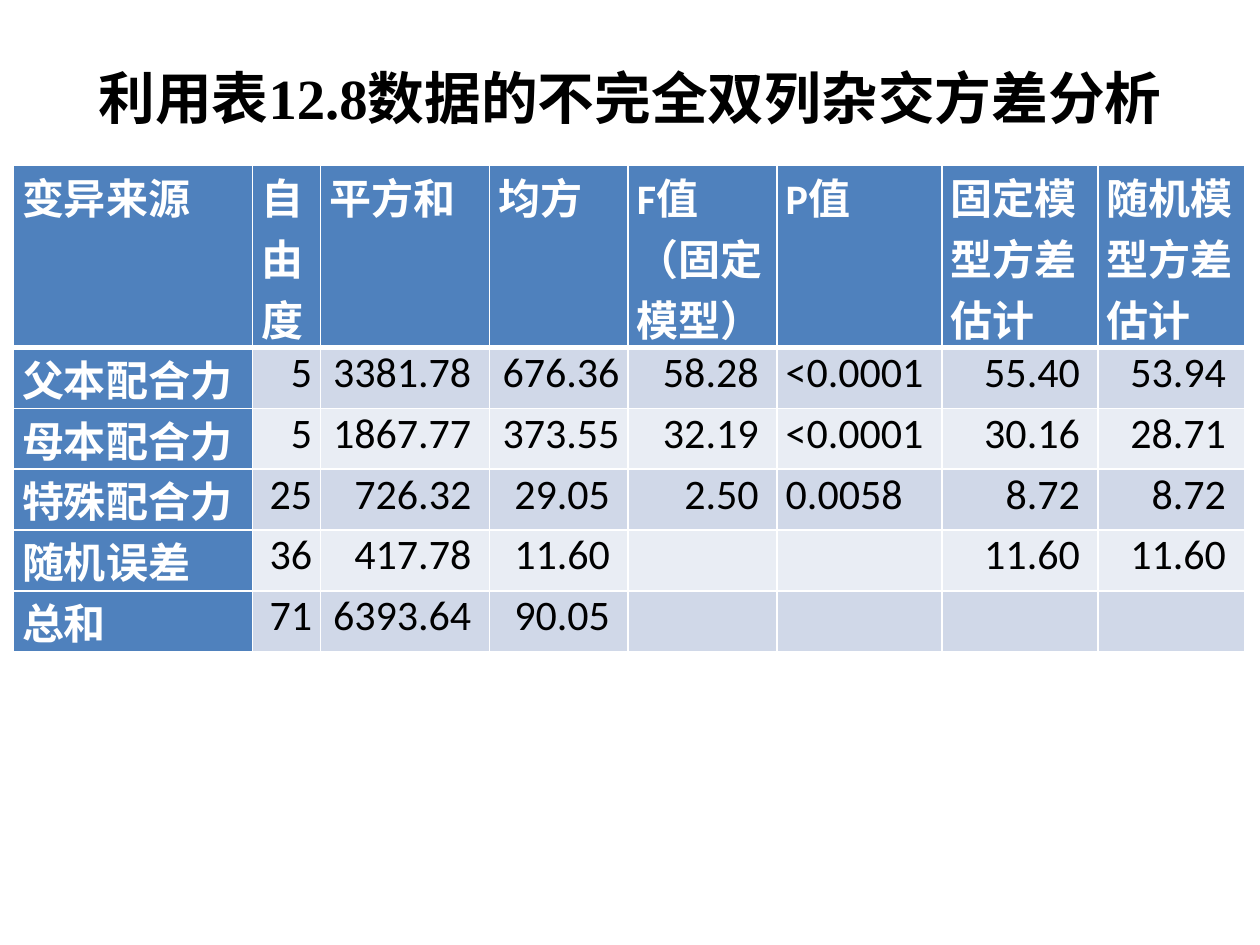
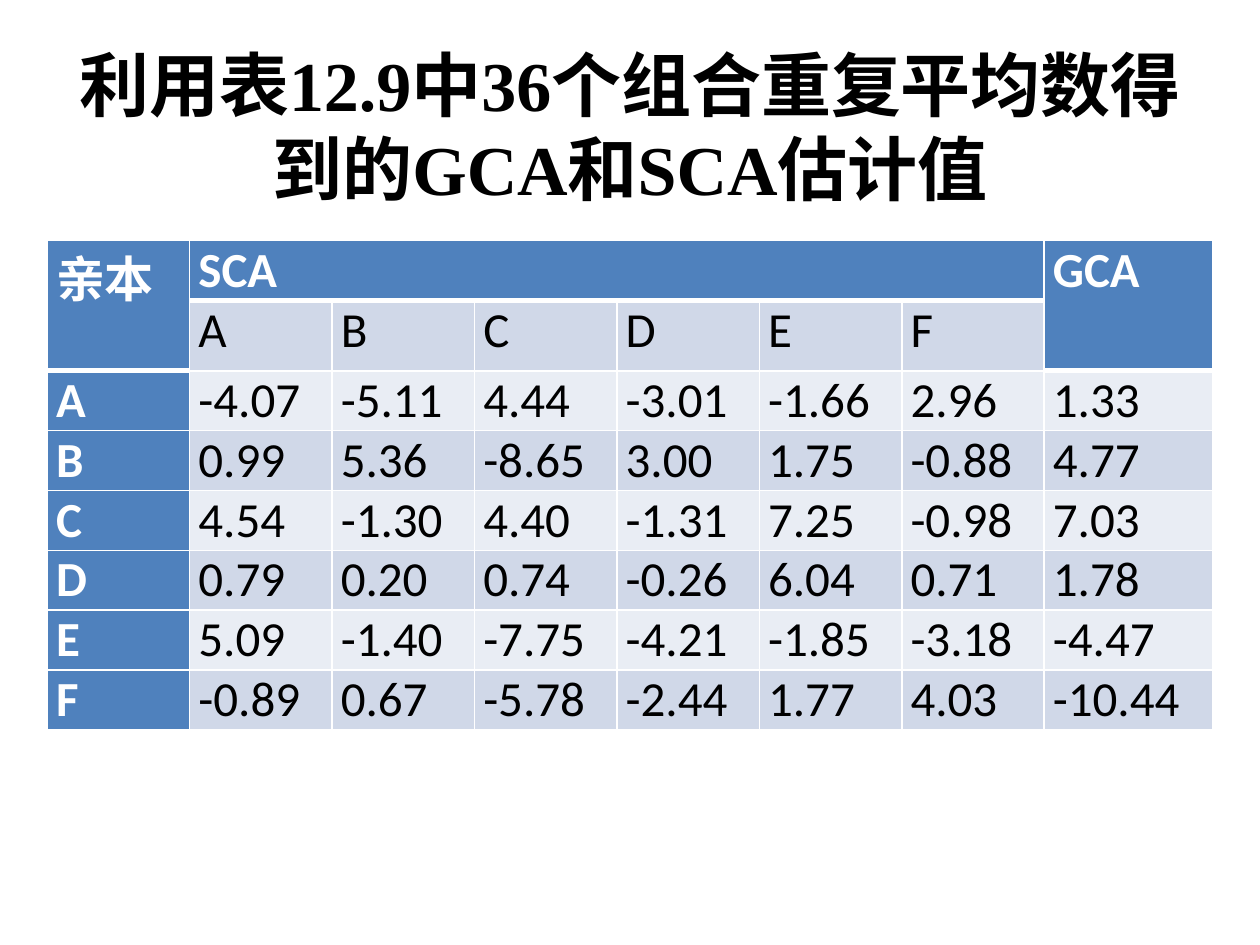
from dataclasses import dataclass

from lxml.etree import SubElement
from pptx import Presentation
from pptx.dml.color import RGBColor as RGB
from pptx.enum.text import MSO_ANCHOR as ANCHOR, PP_ALIGN as ALIGN
from pptx.oxml.ns import qn
from pptx.util import Pt

# Content: variance analysis
ANOVA_TITLE = "利用表12.8数据的不完全双列杂交方差分析"
ANOVA = [
    ["变异来源", "自由度", "平方和", "均方", "F值（固定模型）", "P值",
     "固定模型方差估计", "随机模型方差估计"],
    ["父本配合力", 5, 3381.78, 676.36, 58.28, "<0.0001", 55.40, 53.94],
    ["母本配合力", 5, 1867.77, 373.55, 32.19, "<0.0001", 30.16, 28.71],
    ["特殊配合力", 25, 726.32, 29.05, 2.50, "0.0058", 8.72, 8.72],
    ["随机误差", 36, 417.78, 11.60, "", "", 11.60, 11.60],
    ["总和", 71, 6393.64, 90.05, "", "", "", ""],
]

# Content: combining abilities, SCA by parent pair and GCA last
ABILITY_TITLE = "利用表12.9中36个组合重复平均数得到的GCA和SCA估计值"
PARENTS = "ABCDEF"
ESTIMATES = [
    [-4.07, -5.11, 4.44, -3.01, -1.66, 2.96, 1.33],
    [0.99, 5.36, -8.65, 3.00, 1.75, -0.88, 4.77],
    [4.54, -1.30, 4.40, -1.31, 7.25, -0.98, 7.03],
    [0.79, 0.20, 0.74, -0.26, 6.04, 0.71, 1.78],
    [5.09, -1.40, -7.75, -4.21, -1.85, -3.18, -4.47],
    [-0.89, 0.67, -5.78, -2.44, 1.77, 4.03, -10.44],
]
ABILITY = [
    ["亲本", "SCA", "", "", "", "", "", "GCA"],
    ["", *PARENTS, ""],
    *([parent, *(f"{v:.2f}" for v in row)]
      for parent, row in zip(PARENTS, ESTIMATES)),
]
ABILITY_MERGES = [((0, 0), (1, 0)), ((0, 1), (0, 6)), ((0, 7), (1, 7))]


@dataclass(frozen=True)
class Theme:
    head: str = "4F81BD"
    bands: tuple = ("E9EDF4", "D0D8E8")
    light: str = "FFFFFF"
    dark: str = "000000"
    title_font: str = "Times New Roman"
    body_font: str = "Calibri"
    anova_title: float = 32.4
    anova_body: float = 24
    ability_title: float = 40
    ability_body: float = 28
    thin: float = 1
    heavy: float = 3
    inset: float = 5


T = Theme()


def add_run(p, text, font, size, color, bold):
    r = p.add_run()
    r.text = text
    r.font.name, r.font.size, r.font.bold = font, Pt(size), bold
    r.font.color.rgb = RGB.from_string(color)


def add_title(s, text, top, height, size):
    tf = s.shapes.add_textbox(Pt(36), Pt(top), Pt(648), Pt(height)).text_frame
    tf.word_wrap = True
    tf.vertical_anchor = ANCHOR.MIDDLE
    p = tf.paragraphs[0]
    p.alignment = ALIGN.CENTER
    add_run(p, text, T.title_font, size, T.dark, True)


def set_borders(cell, top, bottom):
    tc_pr = cell._tc.get_or_add_tcPr()
    for side, width in zip("LRTB", (T.thin, T.thin, top, bottom)):
        ln = SubElement(tc_pr, qn(f"a:ln{side}"), w=str(Pt(width)))
        SubElement(SubElement(ln, qn("a:solidFill")), qn("a:srgbClr"), val=T.light)


def add_grid(s, rows, left, top, widths, heights, size, layout, merges=()):
    """Draw rows as a table; layout(r, c, value) gives alignment and anchor."""
    tbl = s.shapes.add_table(len(rows), len(widths), Pt(left), Pt(top),
                             Pt(sum(widths)), Pt(sum(heights))).table
    for col, width in zip(tbl.columns, widths):
        col.width = Pt(width)
    for row, height in zip(tbl.rows, heights):
        row.height = Pt(height)

    # The header is the first row and whatever is merged down from it
    header = {(0, c) for c in range(len(widths))} | {end for _, end in merges}
    for start, end in merges:
        tbl.cell(*start).merge(tbl.cell(*end))

    def rule_below(r, c):
        return T.heavy if (r, c) in header else T.thin

    for r, row in enumerate(rows):
        for c, value in enumerate(row):
            cell = tbl.cell(r, c)
            strong = c == 0 or (r, c) in header
            cell.margin_left = cell.margin_right = Pt(T.inset)
            cell.margin_top = cell.margin_bottom = 0
            set_borders(cell, rule_below(r - 1, c), rule_below(r, c))
            cell.fill.solid()
            cell.fill.fore_color.rgb = RGB.from_string(
                T.head if strong else T.bands[r % 2])
            if value == "":
                continue
            p = cell.text_frame.paragraphs[0]
            p.alignment, cell.vertical_anchor = layout(r, c, value)
            # Decimals keep a space between the figure and the cell edge
            text = f"{value:.2f} " if isinstance(value, float) else str(value)
            add_run(p, text, T.body_font, size,
                    T.light if strong else T.dark, strong)


def anova_layout(r, c, value):
    if r == 0:
        return ALIGN.LEFT, ANCHOR.TOP
    return ALIGN.JUSTIFY if isinstance(value, str) else ALIGN.RIGHT, ANCHOR.TOP


def ability_layout(r, c, value):
    if r < 2:
        return ALIGN.JUSTIFY, ANCHOR.TOP
    return ALIGN.LEFT, ANCHOR.BOTTOM if c == 7 else ANCHOR.TOP


def main():
    prs = Presentation()
    prs.slide_width, prs.slide_height = Pt(720), Pt(540)
    blank = prs.slide_layouts[6]

    # Variance analysis
    s = prs.slides.add_slide(blank)
    add_title(s, ANOVA_TITLE, 27.4, 55.4, T.anova_title)
    add_grid(s, ANOVA, 7.6, 94.6, [136.8, 38.9, 96.5, 79.2, 85, 94.3, 89.3, 83.5],
             [104] + [34.8] * 5, T.anova_body, anova_layout)

    # Combining abilities
    s = prs.slides.add_slide(blank)
    add_title(s, ABILITY_TITLE, 21.6, 100.8, T.ability_title)
    add_grid(s, ABILITY, 27, 137.5, [81.4] * 7 + [96.5],
             [34.2, 40.2] + [34.2] * 6, T.ability_body, ability_layout,
             ABILITY_MERGES)

    prs.save("out.pptx")


if __name__ == "__main__":
    main()
